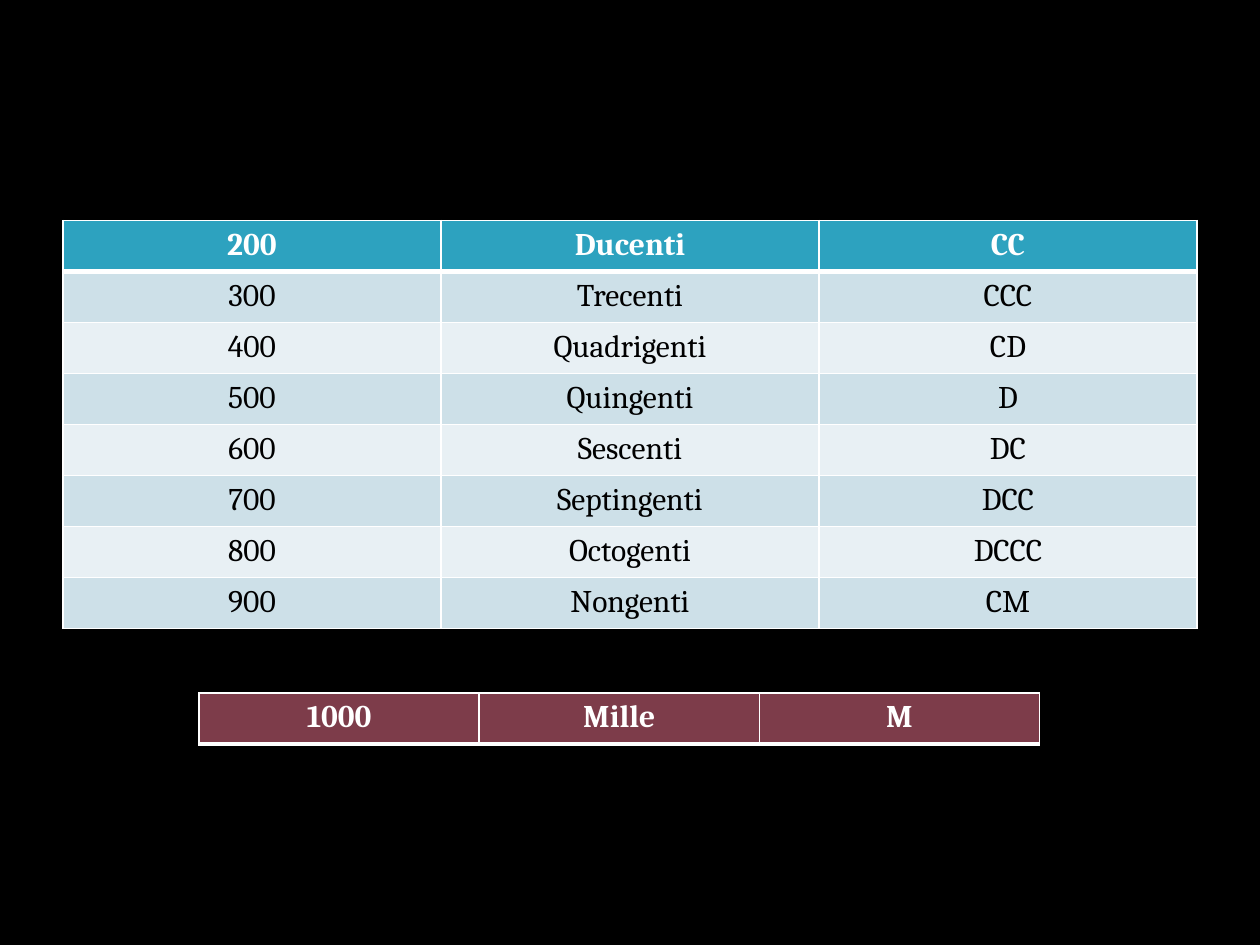
from pptx import Presentation
from pptx import util as u
from pptx.dml.color import RGBColor
from pptx.enum import text
from pptx.oxml import parse_xml
from pptx.oxml.ns import nsdecls

BLACK = RGBColor(0x00, 0x00, 0x00)
WHITE = RGBColor(0xFF, 0xFF, 0xFF)
TEAL = RGBColor(0x2D, 0xA2, 0xBF)
MAROON = RGBColor(0x7D, 0x3C, 0x4A)
BANDS = [RGBColor(0xE8, 0xF0, 0xF4), RGBColor(0xCD, 0xE0, 0xE8)]
ROW_H = 0.405

HUNDREDS = [
    ("200", "Ducenti", "CC"),
    ("300", "Trecenti", "CCC"),
    ("400", "Quadrigenti", "CD"),
    ("500", "Quingenti", "D"),
    ("600", "Sescenti", "DC"),
    ("700", "Septingenti", "DCC"),
    ("800", "Octogenti", "DCCC"),
    ("900", "Nongenti", "CM"),
]
THOUSAND = [("1000", "Mille", "M")]


def set_border(cell, side, points):
    cell._tc.get_or_add_tcPr().append(parse_xml(
        f'<a:{side} {nsdecls("a")} w="{u.Pt(points)}"><a:solidFill>'
        f'<a:srgbClr val="{WHITE}"/></a:solidFill></a:{side}>'))


def add_numeral_table(s, rows, left, top, width, header_fill):
    cols = len(rows[0])
    table = s.shapes.add_table(
        len(rows), cols, u.Inches(left), u.Inches(top),
        u.Inches(width), u.Inches(ROW_H * len(rows))).table
    for column in table.columns:
        column.width = u.Inches(width / cols)
    for i, row in enumerate(rows):
        table.rows[i].height = u.Inches(ROW_H)
        for j, value in enumerate(row):
            cell = table.cell(i, j)
            # Thick rule under the header row, thin ones elsewhere
            for side in ("lnL", "lnR", "lnT", "lnB"):
                thick = (i, side) in ((0, "lnB"), (1, "lnT"))
                set_border(cell, side, 3 if thick else 1)
            cell.fill.solid()
            cell.fill.fore_color.rgb = BANDS[i % 2] if i else header_fill
            p = cell.text_frame.paragraphs[0]
            p.alignment = text.PP_ALIGN.CENTER
            r = p.add_run()
            r.text = value
            r.font.name = "Cambria"
            r.font.size = u.Pt(18)
            r.font.bold = i == 0
            r.font.color.rgb = BLACK if i else WHITE


# Slide with a black background
prs = Presentation()
prs.slide_width, prs.slide_height = u.Inches(10), u.Inches(7.5)
s = prs.slides.add_slide(prs.slide_layouts[6])
s.background.fill.solid()
s.background.fill.fore_color.rgb = BLACK

# Hundreds, then the thousand below
add_numeral_table(s, HUNDREDS, 0.5, 1.75, 9, TEAL)
add_numeral_table(s, THOUSAND, 1.58, 5.5, 6.67, MAROON)

prs.save("out.pptx")
